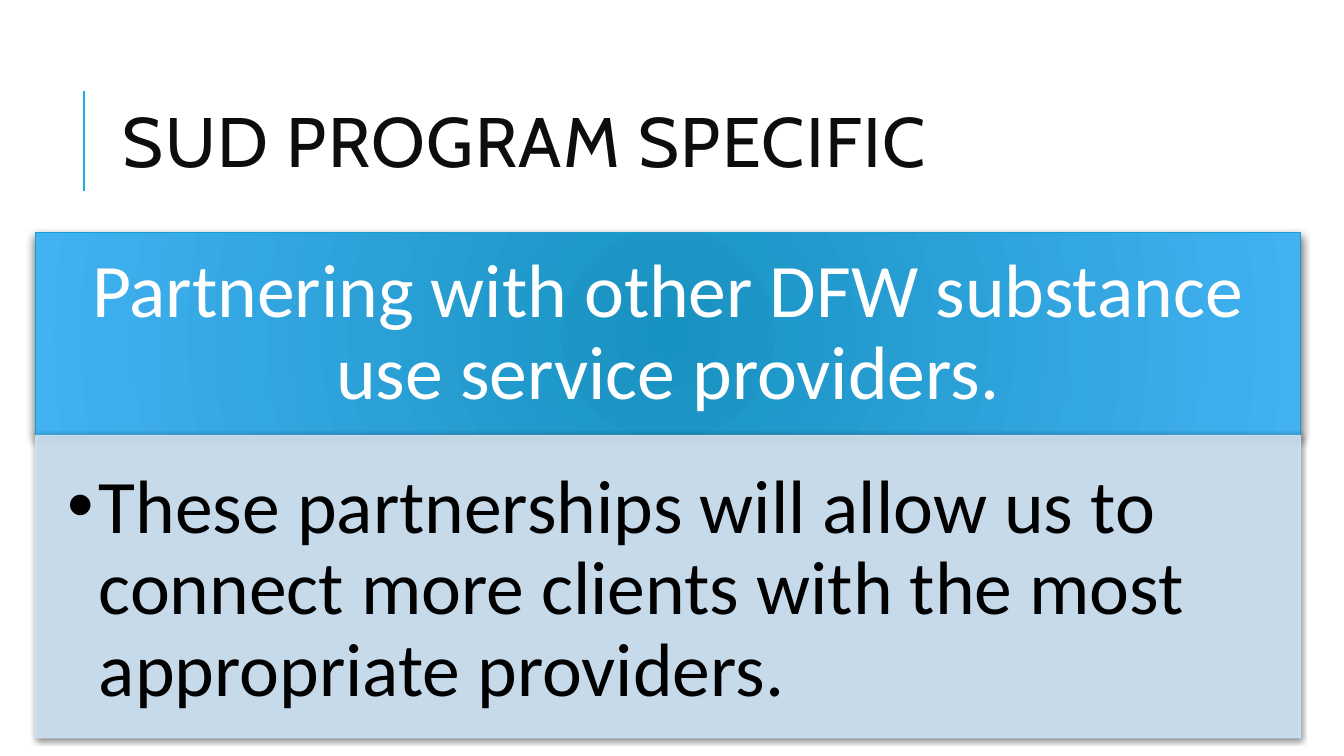
from dataclasses import dataclass

from lxml.etree import SubElement
from pptx import Presentation
from pptx.dml.color import RGBColor
from pptx.enum.shapes import MSO_CONNECTOR, MSO_SHAPE
from pptx.enum.text import MSO_ANCHOR as Anchor, MSO_AUTO_SIZE, PP_ALIGN as Align
from pptx.oxml.ns import qn
from pptx.util import Emu, Inches, Pt


@dataclass(frozen=True)
class Theme:
    heading_font: str = "Cabin"
    body_font: str = "Calibri"
    heading_size: int = 50
    body_size: int = 54
    heading: str = "0D0D0D"
    rule: str = "1CADE4"
    banner_core: str = "1892C1"
    banner_rim: str = "42B2F2"
    banner_edge: str = "199DCF"
    banner_text: str = "FFFFFF"
    panel: str = "CDE3F5"
    panel_text: str = "000000"
    shadow: str = "000000"
    panel_opacity: int = 90


def rgb(value):
    return RGBColor.from_string(value)


def set_opacity(paint, percent):
    """Make the solid colour inside an XML element partly transparent."""
    color = next(paint.iter(qn("a:srgbClr")))
    SubElement(color, qn("a:alpha"), val=str(percent * 1000))


class SlideBuilder:
    """Places elements by percentages of the slide's width and height."""

    def __init__(self, deck, theme):
        self.deck, self.theme = deck, theme
        self.slide = deck.slides.add_slide(deck.slide_layouts[1])

    def x(self, share):
        return Emu(round(self.deck.slide_width * share / 100))

    def y(self, share):
        return Emu(round(self.deck.slide_height * share / 100))

    def box(self, left, top, width, height):
        return self.x(left), self.y(top), self.x(width), self.y(height)

    def place(self, placeholder, box):
        (placeholder.left, placeholder.top,
         placeholder.width, placeholder.height) = self.box(*box)

    def set_text(self, shape, text, font, size, color, align, anchor,
                 spacing, insets=None):
        frame = shape.text_frame
        frame.text = text
        frame.word_wrap = True
        frame.auto_size = MSO_AUTO_SIZE.NONE
        frame.vertical_anchor = anchor
        if insets:
            (frame.margin_left, frame.margin_top,
             frame.margin_right, frame.margin_bottom) = map(Inches, insets)
        paragraph = frame.paragraphs[0]
        paragraph.alignment = align
        paragraph.line_spacing = spacing
        paragraph.space_before = Pt(0)
        run = paragraph.runs[0]
        run.font.name, run.font.size = font, Pt(size)
        run.font.color.rgb = rgb(color)
        return paragraph

    def cast_shadow(self, shape, opacity, blur, distance):
        shape.shadow.inherit = False
        effects = shape.element.spPr.find(qn("a:effectLst"))
        shadow = SubElement(
            effects, qn("a:outerShdw"), blurRad=str(Pt(blur)),
            dist=str(Pt(distance)), dir="5400000", rotWithShape="0")
        SubElement(shadow, qn("a:srgbClr"), val=self.theme.shadow)
        set_opacity(shadow, opacity)

    def outline(self, shape, color):
        shape.line.color.rgb = rgb(color)
        shape.line.width = Pt(0.75)

    def rule(self, left, top, bottom):
        rule = self.slide.shapes.add_connector(
            MSO_CONNECTOR.STRAIGHT, self.x(left), self.y(bottom),
            self.x(left), self.y(top))
        rule.line.color.rgb = rgb(self.theme.rule)
        rule.line.width = Pt(1.5)
        SubElement(rule.element.spPr, qn("a:effectLst"))

    def title(self, text, box):
        heading = self.slide.shapes.title
        self.place(heading, box)
        theme = self.theme
        paragraph = self.set_text(heading, text, theme.heading_font,
                                  theme.heading_size, theme.heading,
                                  Align.LEFT, Anchor.MIDDLE, 0.8)
        paragraph.runs[0].font._element.set("spc", "100")

    def banner(self, text, box):
        theme = self.theme
        banner = self.slide.shapes.add_shape(MSO_SHAPE.RECTANGLE, *self.box(*box))
        banner.fill.gradient()
        core, rim = banner.fill.gradient_stops
        core.position, rim.position = 0, 1
        core.color.rgb, rim.color.rgb = rgb(theme.banner_core), rgb(theme.banner_rim)
        gradient = banner.element.spPr.find(qn("a:gradFill"))
        gradient.remove(gradient.find(qn("a:lin")))
        circle = SubElement(gradient, qn("a:path"), path="circle")
        SubElement(circle, qn("a:fillToRect"), dict.fromkeys("ltrb", "100000"))
        self.outline(banner, theme.banner_edge)
        self.cast_shadow(banner, 60, 6, 2)
        self.set_text(banner, text, theme.body_font, theme.body_size,
                      theme.banner_text, Align.CENTER, Anchor.MIDDLE, 0.9,
                      (0.42, 0.24, 0.42, 0.24))

    def bullet_panel(self, text, box):
        theme = self.theme
        panel = self.slide.placeholders[1]
        self.place(panel, box)
        panel.element.getparent().append(panel.element)  # in front of the banner
        panel.fill.solid()
        panel.fill.fore_color.rgb = rgb(theme.panel)
        self.outline(panel, theme.panel)
        for part in ("a:solidFill", "a:ln"):
            set_opacity(panel.element.spPr.find(qn(part)), theme.panel_opacity)
        self.cast_shadow(panel, 50, 4, 1)
        paragraph = self.set_text(panel, text, theme.body_font, theme.body_size,
                                  theme.panel_text, Align.LEFT, Anchor.TOP, 0.9,
                                  (0.32, 0.32, 0.42, 0.47))
        properties = paragraph._p.get_or_add_pPr()
        indent = Inches(0.31)
        properties.set("marL", str(indent))
        properties.set("indent", str(-indent))
        SubElement(properties, qn("a:buChar"), char="•")


def main():
    deck = Presentation()
    deck.slide_width, deck.slide_height = Inches(13.33), Inches(7.5)
    builder = SlideBuilder(deck, Theme())

    left, width = 2.63, 94.15
    banner_top, banner_height, panel_height = 30.8, 26.8, 40
    builder.rule(6.23, 12, 25.33)
    builder.title("SUD PROGRAM SPECIFIC", (8.4, 8.53, 79.74, 21.87))
    builder.banner("Partnering with other DFW substance use service providers.",
                   (left, banner_top, width, banner_height))
    builder.bullet_panel(
        "These partnerships will allow us to connect more clients "
        "with the most appropriate providers.",
        (left, banner_top + banner_height, width, panel_height))
    deck.save("out.pptx")


if __name__ == "__main__":
    main()
